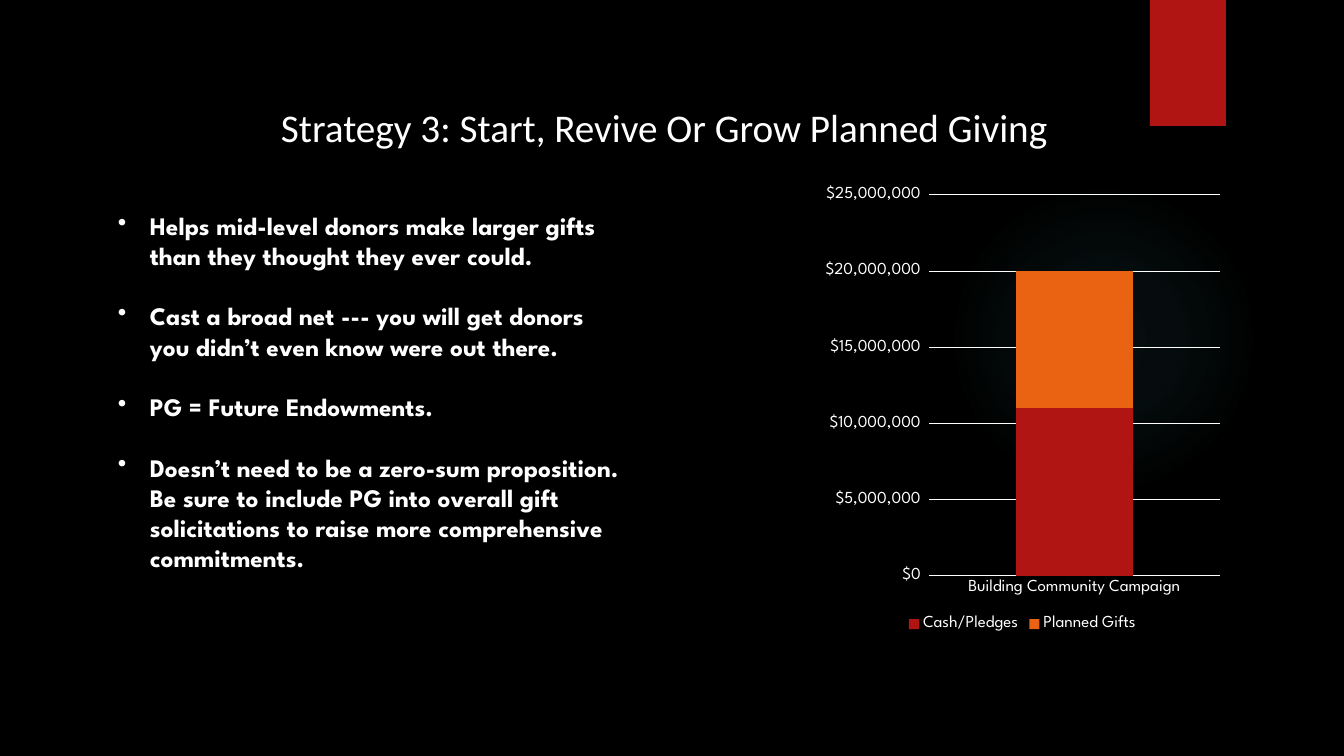
"""Build the planned giving strategy slide with its stacked campaign chart."""
from dataclasses import dataclass

from pptx import Presentation
from pptx.chart.data import CategoryChartData
from pptx.dml.color import RGBColor
from pptx.enum.chart import XL_CHART_TYPE, XL_LEGEND_POSITION, XL_TICK_MARK
from pptx.enum.shapes import MSO_SHAPE
from pptx.enum.text import MSO_AUTO_SIZE
from pptx.oxml import parse_xml
from pptx.oxml.ns import nsdecls, qn
from pptx.slide import Slide
from pptx.text.text import Font
from pptx.util import Emu, Pt

COLORS = {
    "black": "000000",
    "white": "FFFFFF",
    "red": "B01513",
    "orange": "EA6312",
    "glow": "50B9C1",
}
HEADING_FONT = "Calibri"
BODY_FONT = "League Spartan"
PIXELS_PER_INCH = 100.8


@dataclass(frozen=True)
class Area:
    left: int
    top: int
    width: int
    height: int


@dataclass(frozen=True)
class TextBlock:
    area: Area
    paragraphs: tuple[str, ...]
    font: str
    size: int
    bold: bool = False
    bulleted: bool = False
    gap: float = 0


@dataclass(frozen=True)
class GiftSeries:
    name: str
    amount: int
    color: str


SLIDE_AREA = Area(0, 0, 1344, 756)
GLOW_AREA = Area(949, 184, 310, 310)
RIBBON_AREA = Area(1150, 0, 76, 126)
CHART_AREA = Area(817, 178, 411, 458)
PLOT_AREA = Area(112, 17, 291, 381)
BULLET_MARGIN = 82
BULLET_HANG = 32
GLOW_STOPS = ((0, 7), (36, 6), (69, 0))

TEXT_BLOCKS = (
    TextBlock(
        Area(58, 205, 581, 407),
        (
            "Helps mid-level donors make larger gifts than they thought they ever could.",
            "Cast a broad net --- you will get donors you didn’t even know were out there.",
            "PG = Future Endowments.",
            "Doesn’t need to be a zero-sum proposition. Be sure to include PG into overall "
            "gift solicitations to raise more comprehensive commitments.",
        ),
        BODY_FONT, 18, bold=True, bulleted=True, gap=21.6,
    ),
    TextBlock(
        Area(271, 98, 800, 57),
        ("Strategy 3: Start, Revive Or Grow Planned Giving",),
        HEADING_FONT, 28,
    ),
)
CATEGORIES = ("Building Community Campaign",)
GIFTS = (
    GiftSeries("Cash/Pledges", 11_000_000, "red"),
    GiftSeries("Planned Gifts", 9_000_000, "orange"),
)


def px(length: int) -> Emu:
    return Emu(round(length * 914400 / PIXELS_PER_INCH))


def bounds(area: Area) -> tuple[Emu, Emu, Emu, Emu]:
    return px(area.left), px(area.top), px(area.width), px(area.height)


def color(name: str) -> RGBColor:
    return RGBColor.from_string(COLORS[name])


def style_font(font: Font, name: str, size: int, bold: bool = False) -> None:
    font.name = name
    font.size = Pt(size)
    font.bold = bold
    font.color.rgb = color("white")


def add_glow(slide: Slide) -> None:
    glow = slide.shapes.add_shape(MSO_SHAPE.OVAL, *bounds(GLOW_AREA))
    glow.shadow.inherit = False
    glow.line.fill.background()
    stops = "".join(
        f'<a:gs pos="{position * 1000}"><a:srgbClr val="{COLORS["glow"]}">'
        f'<a:alpha val="{opacity * 1000}"/></a:srgbClr></a:gs>'
        for position, opacity in GLOW_STOPS
    )
    gradient = parse_xml(
        f'<a:gradFill {nsdecls("a")} rotWithShape="1"><a:gsLst>{stops}</a:gsLst>'
        '<a:path path="circle"><a:fillToRect l="50000" t="50000" r="50000" b="50000"/>'
        "</a:path></a:gradFill>"
    )
    glow.element.spPr.find(qn("a:prstGeom")).addnext(gradient)


def add_ribbon(slide: Slide) -> None:
    ribbon = slide.shapes.add_shape(MSO_SHAPE.RECTANGLE, *bounds(RIBBON_AREA))
    ribbon.shadow.inherit = False
    ribbon.fill.solid()
    ribbon.fill.fore_color.rgb = color("red")
    ribbon.line.fill.background()


def add_text(slide: Slide, block: TextBlock) -> None:
    frame = slide.shapes.add_textbox(*bounds(block.area)).text_frame
    frame.word_wrap = True
    frame.auto_size = MSO_AUTO_SIZE.SHAPE_TO_FIT_TEXT
    frame.text = "\n".join(block.paragraphs)
    for index, para in enumerate(frame.paragraphs):
        if block.bulleted:
            properties = para._p.get_or_add_pPr()
            properties.set("marL", str(px(BULLET_MARGIN)))
            properties.set("indent", str(-px(BULLET_HANG)))
            properties.append(parse_xml(f'<a:buChar {nsdecls("a")} char="•"/>'))
        if index and block.gap:
            para.space_before = Pt(block.gap)
        for span in para.runs:
            style_font(span.font, block.font, block.size, block.bold)


def add_gift_chart(slide: Slide) -> None:
    data = CategoryChartData()
    data.categories = CATEGORIES
    for gift in GIFTS:
        data.add_series(gift.name, (gift.amount,))
    chart = slide.shapes.add_chart(
        XL_CHART_TYPE.COLUMN_STACKED, *bounds(CHART_AREA), data
    ).chart
    style_font(chart.font, BODY_FONT, 10)
    chart.has_title = False
    chart.has_legend = True
    chart.legend.position = XL_LEGEND_POSITION.BOTTOM
    chart.legend.include_in_layout = False

    plot = chart.plots[0]
    plot.gap_width = 150
    plot.overlap = 100
    plot.vary_by_categories = False
    for series, gift in zip(plot.series, GIFTS):
        series.format.fill.solid()
        series.format.fill.fore_color.rgb = color(gift.color)

    category_axis, value_axis = chart.category_axis, chart.value_axis
    for axis in (category_axis, value_axis):
        axis.major_tick_mark = XL_TICK_MARK.NONE
        axis.minor_tick_mark = XL_TICK_MARK.NONE
    for font in (
        category_axis.tick_labels.font, value_axis.tick_labels.font, chart.legend.font
    ):
        style_font(font, BODY_FONT, 12)
    value_axis.minimum_scale = 0
    value_axis.maximum_scale = 25_000_000
    value_axis.major_unit = 5_000_000
    value_axis.has_major_gridlines = True
    value_axis.tick_labels.number_format = '"$"#,##0_);[Red]\\("$"#,##0\\)'
    value_axis.tick_labels.number_format_is_linked = False
    value_axis.format.line.fill.background()
    for line in (category_axis.format.line, value_axis.major_gridlines.format.line):
        line.color.rgb = color("white")
        line.width = Pt(0.75)

    plot_area = chart.element.chart.plotArea
    for layout in plot_area.findall(qn("c:layout")):
        plot_area.remove(layout)
    fractions = {
        "x": PLOT_AREA.left / CHART_AREA.width,
        "y": PLOT_AREA.top / CHART_AREA.height,
        "w": PLOT_AREA.width / CHART_AREA.width,
        "h": PLOT_AREA.height / CHART_AREA.height,
    }
    sizes = "".join(f'<c:{key} val="{part:.4f}"/>' for key, part in fractions.items())
    plot_area.insert(0, parse_xml(
        f'<c:layout {nsdecls("c")}><c:manualLayout><c:layoutTarget val="inner"/>'
        f'<c:xMode val="edge"/><c:yMode val="edge"/>{sizes}</c:manualLayout></c:layout>'
    ))


def main() -> None:
    deck = Presentation()
    deck.slide_width, deck.slide_height = px(SLIDE_AREA.width), px(SLIDE_AREA.height)
    page = deck.slides.add_slide(deck.slide_layouts[6])
    page.background.fill.solid()
    page.background.fill.fore_color.rgb = color("black")
    add_glow(page)
    add_ribbon(page)
    for block in TEXT_BLOCKS:
        add_text(page, block)
    add_gift_chart(page)
    deck.save("out.pptx")


if __name__ == "__main__":
    main()
